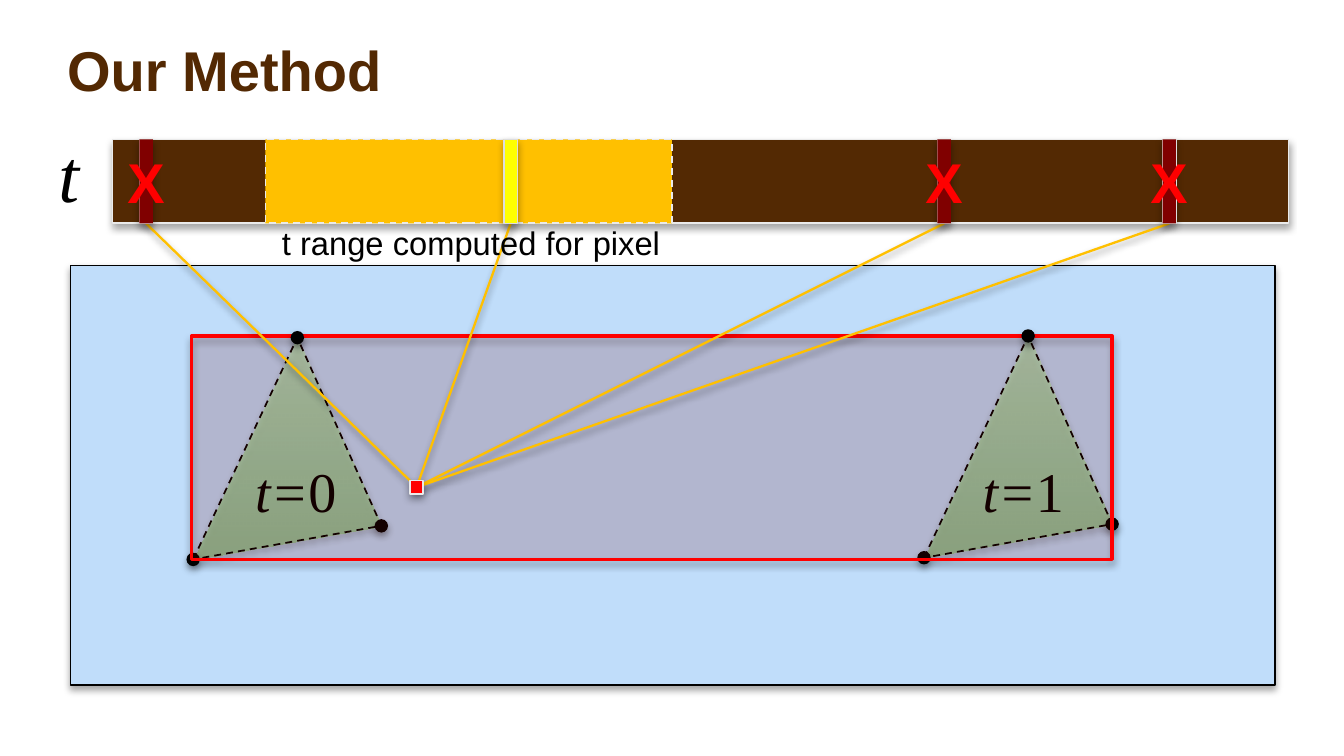
import dataclasses
import typing

import lxml.etree
import pptx
import pptx.dml.color
import pptx.enum.dml
import pptx.enum.shapes
import pptx.enum.text
import pptx.oxml.ns
import pptx.util

Inches = pptx.util.Inches
Pt = pptx.util.Pt
Kind = pptx.enum.shapes.MSO_SHAPE
Dash = pptx.enum.dml.MSO_LINE.DASH
qn = pptx.oxml.ns.qn

BAR_TOP, BAR_HIGH = 0.83, 0.5
SIDE = 0.08  # dots, pixel and tick width
PIXEL = (2.48, 2.9)
CORNERS = [(1.15, 3.33), (1.77, 2.01), (2.27, 3.13)]


@dataclasses.dataclass
class Tick:
    left: float
    hit: bool = False


@dataclasses.dataclass
class Pose:
    """The moving triangle at one time."""
    time: str
    dx: float
    dy: float
    label: float

    def points(self) -> list[tuple[float, float]]:
        return [(x + self.dx, y + self.dy) for x, y in CORNERS]


TICKS = [Tick(3, True), Tick(0.83), Tick(5.58), Tick(6.92)]
POSES = [Pose("0", 0, 0, 1.42), Pose("1", 4.35, -0.01, 5.75)]


def color(code: str) -> pptx.dml.color.RGBColor:
    return pptx.dml.color.RGBColor.from_string(code)


def fade(node, *shares: int) -> None:
    """Set the opacity, in percent, of each colour below the node."""
    for tone, share in zip(list(node.iter(qn("a:srgbClr"))), shares):
        lxml.etree.SubElement(tone, qn("a:alpha"), val=str(share * 1000))


def shade(shape, share: int = 35, dist: float = 1.8) -> None:
    """Cast a soft black shadow straight down."""
    props = shape.element.spPr
    effects = props.find(qn("a:effectLst"))
    if effects is None:
        effects = lxml.etree.SubElement(props, qn("a:effectLst"))
    cast = lxml.etree.SubElement(
        effects, qn("a:outerShdw"), blurRad=str(Pt(3.1)), dist=str(Pt(dist)),
        dir="5400000", algn="ctr", rotWithShape="0")
    lxml.etree.SubElement(cast, qn("a:srgbClr"), val="000000")
    fade(cast, share)


def stroke(shape, code: str, width: float, dash: bool = False) -> None:
    shape.line.color.rgb = color(code)
    shape.line.width = Pt(width)
    if dash:
        shape.line.dash_style = Dash


def block(slide, left: float, top: float, width: float, height: float,
          fill: str, line: str = "", thick: float = 0.75, dash: bool = False,
          shadow: bool = True, kind=Kind.RECTANGLE):
    shape = slide.shapes.add_shape(
        kind, Inches(left), Inches(top), Inches(width), Inches(height))
    shape.shadow.inherit = False
    shape.fill.solid()
    shape.fill.fore_color.rgb = color(fill)
    if line:
        stroke(shape, line, thick, dash)
    else:
        shape.line.fill.background()
    if shadow:
        shade(shape)
    return shape


def dot(slide, point: tuple[float, float]) -> None:
    x, y = point
    block(slide, x - SIDE / 2, y - SIDE / 2, SIDE, SIDE, "000000",
          kind=Kind.OVAL)


def write(para, text: str, face: str, size: int, code: str = "000000",
          bold: bool = False, italic: bool = False) -> None:
    run = para.add_run()
    run.text = text
    run.font.name = face
    run.font.size = Pt(size)
    run.font.color.rgb = color(code)
    run.font.bold = bold
    run.font.italic = italic


def label(slide, left: float, top: float, width: float, height: float):
    """Add an unwrapped text box and return its paragraph."""
    box = slide.shapes.add_textbox(
        Inches(left), Inches(top), Inches(width), Inches(height))
    box.text_frame.word_wrap = False
    return box.text_frame.paragraphs[0]


def wedge(slide, pose: Pose) -> None:
    first, *rest = [(Inches(x), Inches(y)) for x, y in pose.points()]
    path = slide.shapes.build_freeform(*first)
    path.add_line_segments(rest, close=True)
    shape = path.convert_to_shape()
    shape.shadow.inherit = False
    shape.fill.gradient()
    shape.fill.gradient_angle = 90
    for stop, code in zip(shape.fill.gradient_stops, ("73CC48", "BBFFA6")):
        stop.color.rgb = color(code)
    fade(shape.element.spPr, 42, 49)
    stroke(shape, "000000", 0.75, dash=True)
    shade(shape)


def ray(slide, tick: Tick):
    """Draw a line from the pixel to the foot of a tick."""
    ends = (*PIXEL, tick.left + SIDE / 2, BAR_TOP + BAR_HIGH)
    line = slide.shapes.add_connector(
        pptx.enum.shapes.MSO_CONNECTOR.STRAIGHT, *map(Inches, ends))
    stroke(line, "FFC000", 1)
    shade(line, 38, 1.6)
    return line


def mark(slide, tick: Tick):
    area = (tick.left, BAR_TOP, SIDE, BAR_HIGH)
    base = block(slide, *area, "FFFF00", "DDDDDD", 0.5)
    if not tick.hit:
        block(slide, *area, "800000", shadow=False)
        write(label(slide, tick.left - 0.17, BAR_TOP, 0.43, BAR_HIGH),
              "X", "Arial", 24, "FF0000", bold=True)
    return base


def head(slide, text: str) -> None:
    title = slide.shapes.title
    title.left, title.top = Inches(0.32), Inches(0.17)
    title.width, title.height = Inches(6.94), Inches(0.48)
    frame = title.text_frame
    frame.auto_size = pptx.enum.text.MSO_AUTO_SIZE.NONE
    frame.vertical_anchor = pptx.enum.text.MSO_ANCHOR.MIDDLE
    frame.margin_left = frame.margin_right = Inches(0.08)
    frame.margin_top = frame.margin_bottom = Inches(0.04)
    para = frame.paragraphs[0]
    para.alignment = pptx.enum.text.PP_ALIGN.LEFT
    write(para, text, "Arial", 24, "532903", bold=True)


def main() -> None:
    deck: typing.Any = pptx.Presentation()
    deck.slide_width, deck.slide_height = Inches(8), Inches(4.5)
    slide = deck.slides.add_slide(deck.slide_layouts[5])
    head(slide, "Our Method")

    block(slide, 0.42, 1.58, 7.17, 2.5, "C0DDFA", "000000")
    for pose in POSES:
        wedge(slide, pose)
        para = label(slide, pose.label, 2.67, 0.69, 0.51)
        write(para, "t=", "Times New Roman", 24, italic=True)
        write(para, pose.time, "Times New Roman", 24)
        low, _, right = pose.points()
        dot(slide, right)
        dot(slide, low)

    block(slide, 0.67, BAR_TOP, 7, BAR_HIGH, "532903", "EAEAEA")
    write(label(slide, 0.25, 0.71, 0.33, 0.64),
          "t", "Times New Roman", 32, italic=True)

    bounds = block(slide, 1.14, 2, 5.48, 1.33, "990000", "FF0000", 1.5)
    fade(bounds.element.spPr, 13)
    for pose in POSES:
        dot(slide, pose.points()[1])

    rays = [ray(slide, tick) for tick in TICKS]
    block(slide, PIXEL[0] - SIDE / 2, PIXEL[1] - SIDE / 2, SIDE, SIDE,
          "FF0000", "EAEAEA")
    block(slide, 1.58, BAR_TOP, 2.42, BAR_HIGH, "FFC000", "EAEAEA",
          dash=True, shadow=False)
    for tick, line in zip(TICKS, rays):
        line.end_connect(mark(slide, tick), 2)
    write(label(slide, 1.58, 1.28, 2.46, 0.28),
          "t range computed for pixel", "Arial", 14)
    deck.save("out.pptx")


if __name__ == "__main__":
    main()
